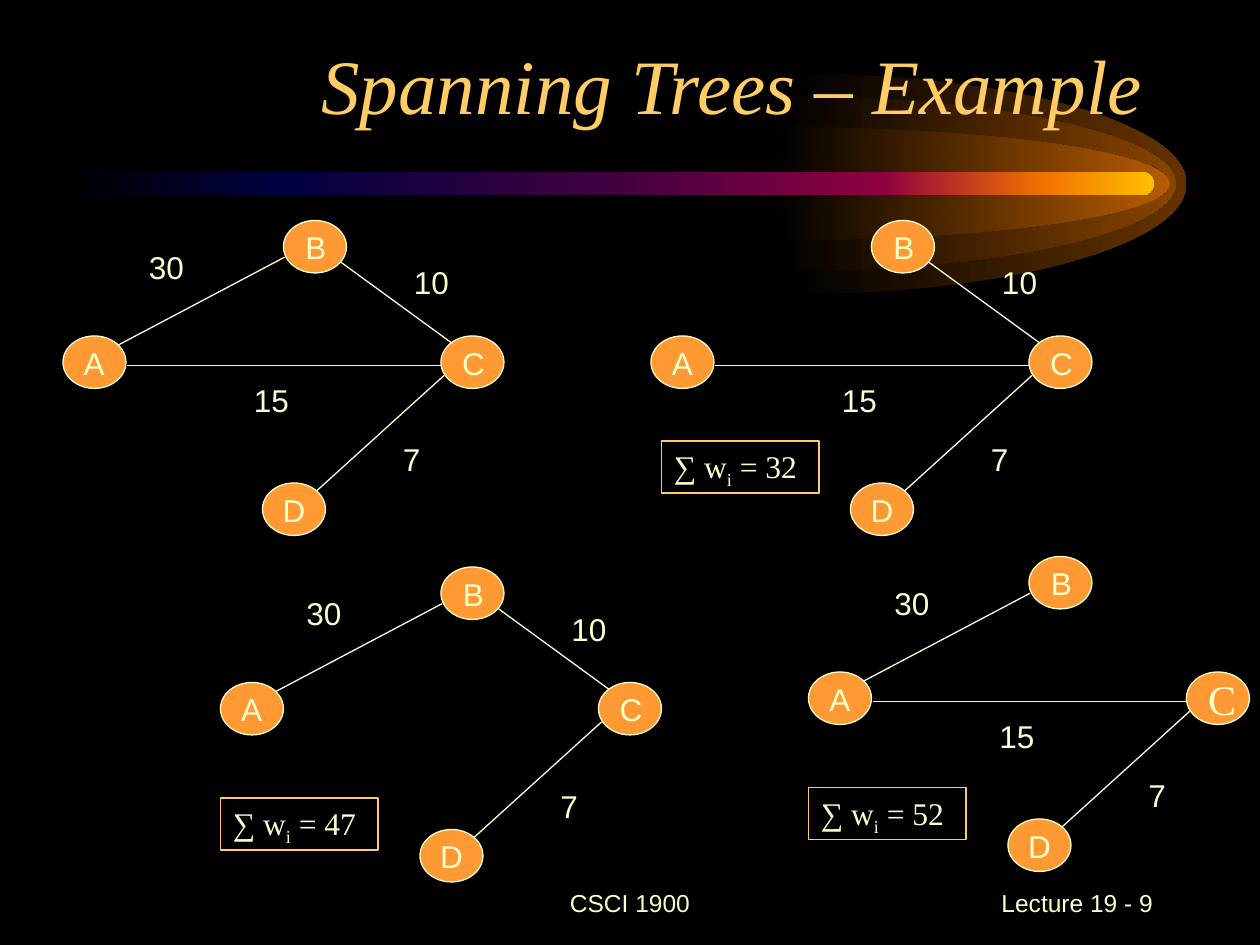
"""Build the spanning tree example slide on a grid of 120 columns by 90 rows."""
import copy

import lxml.etree
import pptx
import pptx.dml.color
import pptx.enum.shapes
import pptx.enum.text
import pptx.oxml.ns
import pptx.util

RGB = pptx.dml.color.RGBColor
BLACK = RGB(0x00, 0x00, 0x00)
CREAM = RGB(0xFF, 0xFF, 0xCC)
GOLD = RGB(0xFF, 0xCC, 0x66)
ORANGE = RGB(0xFF, 0x99, 0x33)
TAILS = [
    (75.5, 10.5, RGB(0x66, 0x33, 0x00)),
    (74.5, 8.35, RGB(0x89, 0x44, 0x00)),
    (73.9, 5.4, RGB(0xB7, 0x5B, 0x00)),
]
BAR = [
    (0, BLACK),
    (0.2, RGB(0x00, 0x00, 0x40)),
    (0.5, RGB(0x40, 0x00, 0x40)),
    (0.75, RGB(0x8F, 0x00, 0x40)),
    (0.9, RGB(0xF2, 0x73, 0x00)),
    (1, RGB(0xFF, 0xBF, 0x00)),
]
SHAPE = pptx.enum.shapes.MSO_SHAPE
ALIGN = pptx.enum.text.PP_ALIGN
ANCHOR = pptx.enum.text.MSO_ANCHOR
SANS, SERIF = "Arial", "Times New Roman"
qn = pptx.oxml.ns.qn

prs = pptx.Presentation()
prs.slide_width = pptx.util.Inches(10)
prs.slide_height = pptx.util.Inches(7.5)
U = prs.slide_width // 120
s = prs.slides.add_slide(prs.slide_layouts[6])
s.background.fill.solid()
s.background.fill.fore_color.rgb = BLACK


def shade(sp, stops):
    sp.shadow.inherit = False
    sp.line.fill.background()
    sp.fill.gradient()
    sp.fill.gradient_angle = 0
    gs_list = sp._element.spPr.find(".//" + qn("a:gsLst"))
    for _ in stops[2:]:
        gs_list.append(copy.deepcopy(gs_list[0]))
    for gs, (pos, color) in zip(sp.fill.gradient_stops, stops):
        gs.position = pos
        gs.color.rgb = color


def write(sp, runs, size, font, color=CREAM, align=ALIGN.LEFT, anchor=ANCHOR.TOP, wrap=True):
    tf = sp.text_frame
    tf.word_wrap = wrap
    tf.vertical_anchor = anchor
    p = tf.paragraphs[0]
    p.alignment = align
    for text in runs:
        r = p.add_run()
        r.text = text
        r.font.size = pptx.util.Pt(size)
        r.font.name = font
        r.font.color.rgb = color
    return p.runs


comet = s.shapes.add_group_shape().shapes
rx, mid = 37.5 * U, 17.5 * U
for cx, rows, color in TAILS:
    x, ry = round(cx * U), rows * U
    fb = comet.build_freeform(x, round(mid - ry))
    fb.add_line_segments([(round(x + rx), round(mid)), (x, round(mid + ry))], close=True)
    sp = fb.convert_to_shape()
    controls = [[(0.55, 0), (1, 0.45)], [(1, 1.55), (0.55, 2)]]
    for curve, pair in zip(list(sp._element.spPr.iter(qn("a:lnTo"))), controls):
        bezier = lxml.etree.Element(qn("a:cubicBezTo"))
        for fx, fy in pair:
            lxml.etree.SubElement(bezier, qn("a:pt"), x=str(round(fx * rx)), y=str(round(fy * ry)))
        bezier.append(curve[0])
        curve.getparent().replace(curve, bezier)
    shade(sp, [(0, BLACK), (1, color)])
bar = comet.add_shape(SHAPE.ROUNDED_RECTANGLE, 6 * U, round(16.4 * U), round(103.9 * U), round(2.2 * U))
bar.adjustments[0] = 0.5
shade(bar, BAR)

for x, w, text, align in [(41, 38, "CSCI 1900", ALIGN.CENTER), (86, 25, " Lecture 19 - 9", ALIGN.RIGHT)]:
    sp = s.shapes.add_textbox(x * U, 83 * U, w * U, 6 * U)
    write(sp, [text], 14, SANS, align=align, anchor=ANCHOR.MIDDLE)
sp = s.shapes.add_textbox(8 * U, 3 * U, 102 * U, 10 * U)
title = write(sp, ["Spanning Trees – Example"], 44, SERIF, GOLD, ALIGN.RIGHT, ANCHOR.BOTTOM)
title[0].font.italic = True

NODES = {"A": (0, 0, 0.8), "B": (21, -11, 0.9), " C": (36, 0, 0), "D": (19, 14, 0.75)}
EDGES = {
    "30": ((5, 1, 21.1, -7.5), (7, -9)),
    "10": ((26.5, -7, 37, 0.65), (32.25, -7.5)),
    "15": ((6.1, 2.8, 36.1, 2.8), (17, 3.7)),
    "7": ((24.1, 14.8, 36.3, 3.75), (31.2, 9.35)),
}
TREES = [
    (21, 65, ["30", "10", "7"], False),
    (62, 32, ["10", "15", "7"], False),
    (77, 64, ["30", "15", "7"], True),
    (6, 32, ["30", "10", "15", "7"], False),
]
for left, top, weights, serif_c in TREES:
    tree = s.shapes.add_group_shape().shapes
    for weight in weights:
        (x1, y1, x2, y2), (x, y) = EDGES[weight]
        ends = [round(v * U) for v in (left + x1, top + y1, left + x2, top + y2)]
        edge = tree.add_connector(pptx.enum.shapes.MSO_CONNECTOR.STRAIGHT, *ends)
        edge.line.color.rgb = CREAM
        edge.line.width = pptx.util.Pt(0.75)
        lxml.etree.SubElement(edge._element.spPr, qn("a:effectLst"))
        sp = tree.add_textbox(round((left + x) * U), round((top + y) * U), 6 * U, round(4.8 * U))
        write(sp, [weight], 18, SANS)
    for name, (x, y, indent) in NODES.items():
        node = tree.add_shape(SHAPE.OVAL, (left + x) * U, (top + y) * U, 6 * U, 5 * U)
        node.shadow.inherit = False
        node.fill.solid()
        node.fill.fore_color.rgb = ORANGE
        node.line.color.rgb = CREAM
        node.line.width = pptx.util.Pt(0.75)
        if serif_c and name == " C":
            write(node, ["C"], 24, SERIF, anchor=ANCHOR.MIDDLE, wrap=False)
        else:
            sp = tree.add_textbox(round((left + x + indent) * U), round((top + y + 0.17) * U), 7 * U, round(4.8 * U))
            write(sp, [name], 18, SANS)

for x, y, total in [(63, 42, 32), (21, 76, 47), (77, 75, 52)]:
    box = s.shapes.add_shape(SHAPE.RECTANGLE, x * U, y * U, 15 * U, round(4.95 * U))
    box.shadow.inherit = False
    box.fill.background()
    box.line.color.rgb = GOLD
    box.line.width = pptx.util.Pt(1)
    runs = write(box, ["∑ w", "i", f" = {total}"], 18, SERIF)
    runs[1].font._element.set("baseline", "-25000")

prs.save("out.pptx")
